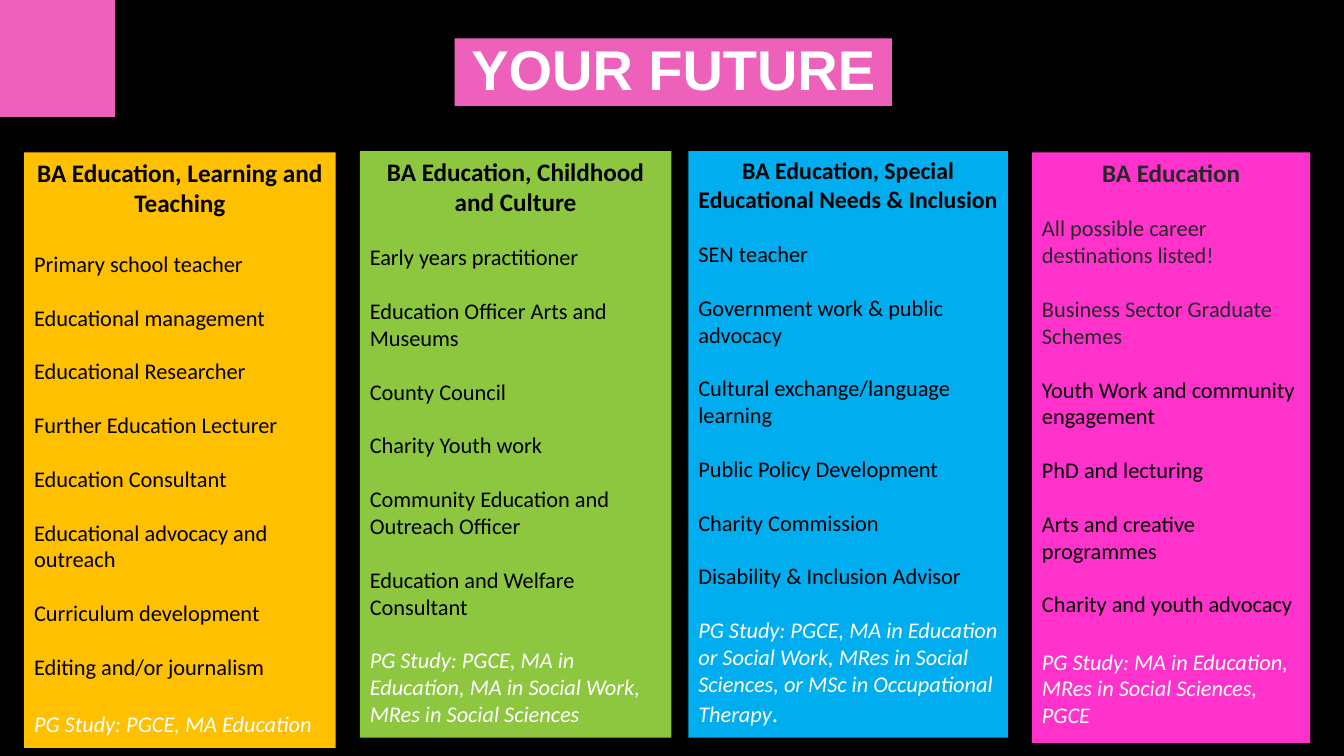
from pptx import Presentation
from pptx.dml.color import RGBColor
from pptx.enum.shapes import MSO_SHAPE
from pptx.enum.text import MSO_ANCHOR, PP_ALIGN
from pptx.util import Cm, Pt

BLACK = RGBColor(0x00, 0x00, 0x00)
WHITE = RGBColor(0xFF, 0xFF, 0xFF)
CHARCOAL = RGBColor(0x28, 0x28, 0x28)
PINK = RGBColor(0xED, 0x61, 0xBA)
AMBER = RGBColor(0xFF, 0xC0, 0x00)
GREEN = RGBColor(0x8D, 0xC6, 0x3F)
BLUE = RGBColor(0x00, 0xAE, 0xEF)
MAGENTA = RGBColor(0xFF, 0x33, 0xCC)

TITLE = "YOUR FUTURE"
CAREER_SIZE = 16
CAREER_GAP = 19.2

# box in cm; gaps in points, before the first career and before the PG study line;
# "muted" counts the opening paragraphs set in charcoal
DEGREES = [
    dict(
        heading="BA Education, Learning and Teaching",
        careers=[
            "Primary school teacher",
            "Educational management",
            "Educational Researcher",
            "Further Education Lecturer",
            "Education Consultant",
            "Educational advocacy and outreach",
            "Curriculum development",
            "Editing and/or journalism",
        ],
        study="PG Study: PGCE, MA Education", ending="",
        box=(0.61, 3.84, 7.85, 15.01), fill=AMBER,
        heading_size=18, first_gap=23, study_gap=21.6, muted=0,
    ),
    dict(
        heading="BA Education, Childhood and Culture",
        careers=[
            "Early years practitioner",
            "Education Officer Arts and Museums",
            "County Council",
            "Charity Youth work",
            "Community Education and Outreach Officer",
            "Education and Welfare Consultant",
        ],
        study="PG Study: PGCE, MA in Education, MA in Social Work, "
              "MRes in Social Sciences", ending="",
        box=(9.07, 3.81, 7.85, 14.78), fill=GREEN,
        heading_size=18, first_gap=CAREER_GAP, study_gap=CAREER_GAP, muted=0,
    ),
    dict(
        heading="BA Education, Special Educational Needs & Inclusion",
        careers=[
            "SEN teacher",
            "Government work & public advocacy",
            "Cultural exchange/language learning",
            "Public Policy Development",
            "Charity Commission",
            "Disability & Inclusion Advisor",
        ],
        study="PG Study: PGCE, MA in Education or Social Work, MRes in Social "
              "Sciences, or MSc in Occupational Therapy", ending=".",
        box=(17.35, 3.81, 8.05, 14.78), fill=BLUE,
        heading_size=17, first_gap=CAREER_GAP, study_gap=CAREER_GAP, muted=0,
    ),
    dict(
        heading="BA Education",
        careers=[
            "All possible career destinations listed!",
            "Business Sector Graduate Schemes",
            "Youth Work and community engagement",
            "PhD and lecturing",
            "Arts and creative programmes",
            "Charity and youth advocacy",
        ],
        study="PG Study: MA in Education, MRes in Social Sciences, PGCE", ending="",
        box=(26.01, 3.84, 7.01, 14.88), fill=MAGENTA,
        heading_size=18, first_gap=CAREER_GAP, study_gap=21.6, muted=3,
    ),
]


def add_block(slide, box, fill):
    block = slide.shapes.add_shape(MSO_SHAPE.RECTANGLE, *map(Cm, box))
    block.shadow.inherit = False
    block.fill.solid()
    block.fill.fore_color.rgb = fill
    block.line.fill.background()
    block.text_frame.word_wrap = True
    return block


def style(font, size, color, bold=False, italic=False, name="Calibri"):
    font.name, font.size, font.color.rgb = name, Pt(size), color
    font.bold, font.italic = bold, italic


def add_title(slide):
    frame = add_block(slide, (11.46, 0.97, 11.02, 1.7), PINK).text_frame
    frame.vertical_anchor = MSO_ANCHOR.MIDDLE
    frame.text = TITLE
    line = frame.paragraphs[0]
    line.alignment = PP_ALIGN.CENTER
    line.line_spacing = 0.9
    style(line.runs[0].font, 40, WHITE, bold=True, name="Arial")


def add_degree(slide, degree):
    frame = add_block(slide, degree["box"], degree["fill"]).text_frame
    frame.vertical_anchor = MSO_ANCHOR.TOP
    frame.text = "\n".join([degree["heading"], *degree["careers"], degree["study"]])
    heading, *careers, study = frame.paragraphs

    for position, paragraph in enumerate(frame.paragraphs):
        color = CHARCOAL if position < degree["muted"] else BLACK
        paragraph.alignment = PP_ALIGN.LEFT
        style(paragraph.runs[0].font, CAREER_SIZE, color)
    for career in careers:
        career.space_before = Pt(CAREER_GAP)

    heading.alignment = PP_ALIGN.CENTER
    heading.runs[0].font.size = Pt(degree["heading_size"])
    heading.runs[0].font.bold = True
    careers[0].space_before = Pt(degree["first_gap"])
    study.space_before = Pt(degree["study_gap"])
    style(study.runs[0].font, CAREER_SIZE, WHITE, italic=True)
    if degree["ending"]:
        ending = study.add_run()
        ending.text = degree["ending"]
        style(ending.font, 18, WHITE)


def main():
    deck = Presentation()
    deck.slide_width, deck.slide_height = Cm(33.87), Cm(19.05)
    slide = deck.slides.add_slide(deck.slide_layouts[6])
    slide.background.fill.solid()
    slide.background.fill.fore_color.rgb = BLACK

    add_block(slide, (0, 0, 2.9, 2.95), PINK)
    add_title(slide)
    for degree in DEGREES:
        add_degree(slide, degree)
    deck.save("out.pptx")


if __name__ == "__main__":
    main()
